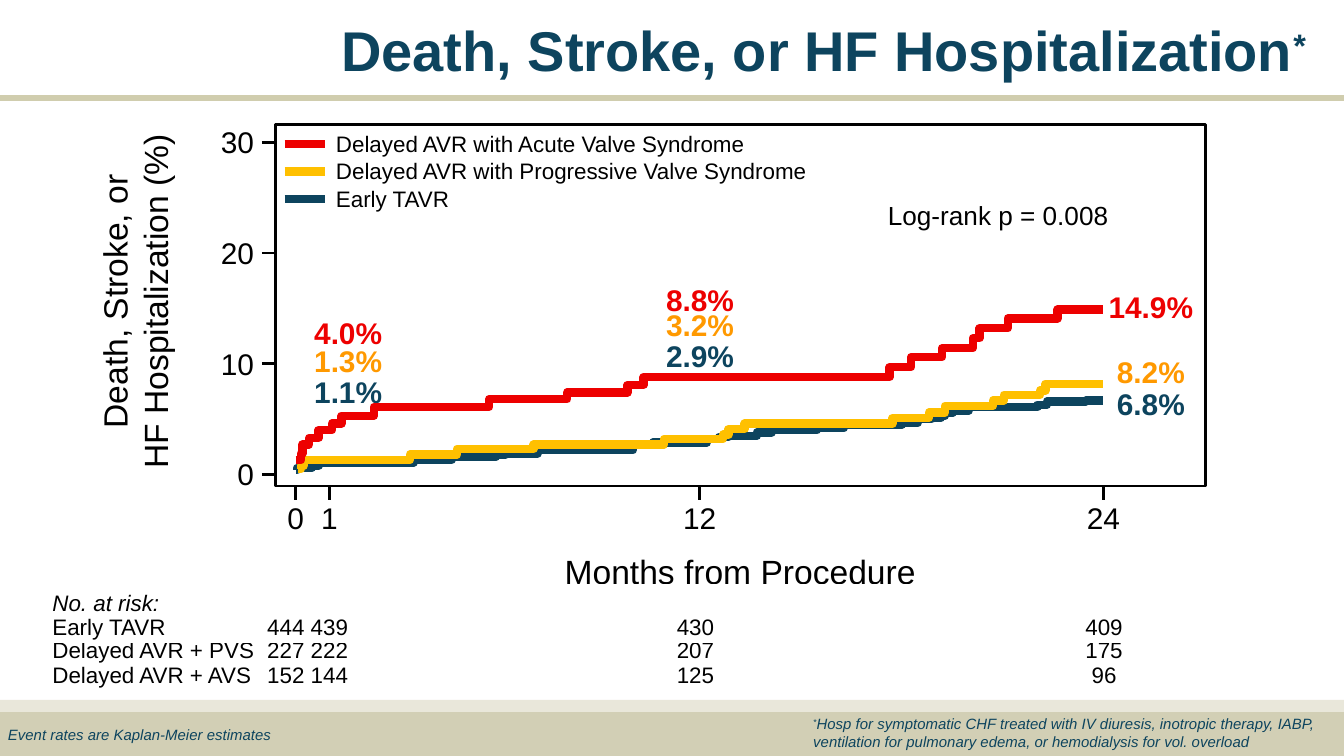
import pptx
import pptx.util
import pptx.dml.color
import pptx.enum.shapes
import pptx.enum.text
import lxml.etree

Cm = pptx.util.Cm
Pt = pptx.util.Pt
RGB = pptx.dml.color.RGBColor.from_string
ALIGN = pptx.enum.text.PP_ALIGN
SHAPE = pptx.enum.shapes.MSO_SHAPE
HUES = {
    "ink": "000000", "navy": "0D445E", "red": "ED0000", "gold": "FFC000",
    "orange": "FF9900", "sand": "D2CFB5", "pale": "E9E7DA", "rule": "D0CDAE",
}
DRAW = "{http://schemas.openxmlformats.org/drawingml/2006/main}"


def write(frame, text, size=16, hue="ink", bold=False, slant=False,
          align=ALIGN.LEFT, space=None):
    frame.word_wrap = True
    for i, line in enumerate(text.split("\n")):
        par = frame.add_paragraph() if i else frame.paragraphs[0]
        par.alignment = align
        par.space_before = Pt(0)
        if space:
            par.line_spacing = Pt(space)
        for part in filter(None, line.partition("*")):
            run = par.add_run()
            run.text = part
            run.font.name = "Arial"
            run.font.size = Pt(size)
            run.font.bold = bold
            run.font.italic = slant
            run.font.color.rgb = RGB(HUES[hue])
            if part == "*":
                run.font._element.set("baseline", "26000")


def place(text, x, y, wide, high, **style):
    frame = slide.shapes.add_textbox(Cm(x), Cm(y), Cm(wide), Cm(high)).text_frame
    frame.margin_left = frame.margin_right = frame.margin_bottom = 0
    frame.margin_top = Cm(0.05)
    write(frame, text, **style)
    return frame


deck = pptx.Presentation()
deck.slide_width = Cm(25.4)
deck.slide_height = Cm(14.29)
slide = deck.slides.add_slide(deck.slide_layouts[5])

for hue, top, high in [("sand", 13.46, 0.83), ("pale", 13.23, 0.23)]:
    band = slide.shapes.add_shape(SHAPE.RECTANGLE, 0, Cm(top), Cm(25.4), Cm(high))
    band.shadow.inherit = False
    band.fill.solid()
    band.fill.fore_color.rgb = RGB(HUES[hue])
    band.line.fill.background()

title = slide.shapes.title
title.left, title.top, title.width, title.height = Cm(6.12), Cm(0.05), Cm(19), Cm(1.78)
frame = title.text_frame
frame.vertical_anchor = pptx.enum.text.MSO_ANCHOR.TOP
frame.margin_left, frame.margin_top = Cm(0.33), Cm(0.25)
frame.margin_right = frame.margin_bottom = 0
write(frame, "Death, Stroke, or HF Hospitalization*", size=30, hue="navy", bold=True)

left, top, wide, high = 5.21, 2.36, 17.57, 6.83
floor = top + high
zero_x, zero_y = 5.59, 8.97
month, point = 0.636, 0.2093

plot = slide.shapes.add_shape(SHAPE.RECTANGLE, Cm(left), Cm(top), Cm(wide), Cm(high))
plot.shadow.inherit = False
plot.fill.background()
plot.line.color.rgb = RGB(HUES["ink"])
plot.line.width = Pt(1.5)

lines = [(0, 1.85, 25.4, 1.85, "rule", 3)]
for rate in (30, 20, 10, 0):
    y = zero_y - rate * point
    lines.append((left - 0.26, y, left, y, "ink", 1.5))
    place(str(rate), 3.8, y - 0.4, 1, 0.74, align=ALIGN.RIGHT)
for time in (0, 1, 12, 24):
    x = zero_x + time * month
    lines.append((x, floor, x, floor + 0.26, "ink", 1.5))
    place(str(time), x - 0.5, 9.4, 1, 0.74, align=ALIGN.CENTER)

legend = [
    ("Delayed AVR with Acute Valve Syndrome", "red"),
    ("Delayed AVR with Progressive Valve Syndrome", "gold"),
    ("Early TAVR", "navy"),
]
for i, (name, hue) in enumerate(legend):
    y = 2.72 + 0.52 * i
    lines.append((5.38, y, 6.15, y, hue, 4.5))
    place(name, 6.35, y - 0.31, 10, 0.58, size=12)

for x1, y1, x2, y2, hue, weight in lines:
    line = slide.shapes.add_connector(
        pptx.enum.shapes.MSO_CONNECTOR.STRAIGHT, Cm(x1), Cm(y1), Cm(x2), Cm(y2))
    line.line.color.rgb = RGB(HUES[hue])
    line.line.width = Pt(weight)
    lxml.etree.SubElement(line._element.spPr, DRAW + "effectLst")

place("Months from Procedure", 10.49, 10.36, 7, 0.8, size=18, align=ALIGN.CENTER)
place("Log-rank p = 0.008", 16.78, 3.71, 5, 0.66, size=14)
label = place("Death, Stroke, or\nHF Hospitalization (%)", 1.78, 2.19, 1.55, 7.02,
              size=18, align=ALIGN.CENTER, space=21.6)
label.margin_top = 0
label._txBody.bodyPr.set("vert", "vert270")

rates = [
    (6.58, [("4.0%", 6.27), ("1.3%", 6.81), ("1.1%", 7.39)]),
    (13.23, [("8.8%", 5.66), ("3.2%", 6.12), ("2.9%", 6.71)]),
    (21.75, [("14.9%", 5.79), ("8.2%", 7.01), ("6.8%", 7.62)]),
]
for x, group in rates:
    for (text, y), hue in zip(group, ("red", "orange", "navy")):
        place(text, x - 1, y - 0.38, 2, 0.74, hue=hue, bold=True, align=ALIGN.CENTER)

risk = [
    ("Early TAVR", "444 439", "430", "409"),
    ("Delayed AVR + PVS", "227 222", "207", "175"),
    ("Delayed AVR + AVS", "152 144", "125", "96"),
]
grid = slide.shapes.add_table(4, 4, Cm(0.91), Cm(11.05), Cm(20.36), Cm(2.02)).table
grid.first_row = grid.horz_banding = False
for col, size in zip(grid.columns, (4.01, 4.8, 7.26, 4.29)):
    col.width = Cm(size)
for row, size in zip(grid.rows, (0.58, 0.48, 0.43, 0.53)):
    row.height = Cm(size)
for row in grid.rows:
    for cell, inset in zip(row.cells, (0.08, 0.13, 3.07, 3.48)):
        cell.fill.background()
        cell.margin_left = Cm(inset)
        cell.margin_right = cell.margin_top = cell.margin_bottom = 0
head = grid.cell(0, 0)
head.merge(grid.cell(0, 3))
head.margin_top = Cm(0.1)
write(head.text_frame, "No. at risk:", size=12, slant=True, space=14.3)
for i, (texts, space) in enumerate(zip(risk, (12.6, 11.3, 12.7)), 1):
    for j, text in enumerate(texts):
        write(grid.cell(i, j).text_frame, text, size=12, space=space,
              align=ALIGN.CENTER if j == 3 else ALIGN.LEFT)

curves = {
    "navy": [
        (0, 0.4), (0.04, 0.6), (0.48, 0.8), (0.68, 1.1), (3.51, 1.3), (4.63, 1.6),
        (5.95, 1.8), (6.23, 1.9), (7.19, 2.2), (10.02, 2.7), (10.62, 2.9),
        (12.22, 3.2), (12.58, 3.4), (12.86, 3.5), (13.7, 3.8), (14.14, 4),
        (15.49, 4.2), (16.29, 4.5), (18.01, 4.7), (18.49, 5), (18.89, 5.1),
        (19.17, 5.3), (19.29, 5.6), (19.53, 5.8), (20, 6.1), (22.04, 6.3),
        (22.32, 6.6), (23.48, 6.7), (24, 6.7)],
    "gold": [
        (0.08, 0.5), (0.16, 0.8), (0.24, 1.3), (3.39, 1.8), (4.79, 2.3),
        (7.07, 2.7), (10.94, 3.2), (12.7, 3.6), (12.86, 4.1), (13.34, 4.6),
        (17.73, 5.1), (18.81, 5.6), (19.29, 6.2), (20.72, 6.7), (21.04, 7.2),
        (22.12, 7.6), (22.28, 8.2), (24, 8.2)],
    "red": [
        (0, 1.3), (0.16, 1.9), (0.2, 2.7), (0.4, 3.3), (0.68, 4), (1.08, 4.6),
        (1.36, 5.3), (2.32, 6.1), (5.75, 6.8), (8.07, 7.4), (9.86, 8.1),
        (10.34, 8.8), (17.65, 9.7), (18.29, 10.6), (19.21, 11.4), (20.12, 12.3),
        (20.32, 13.2), (21.16, 14.1), (22.64, 14.9), (24, 14.9)],
}
for hue, steps in curves.items():
    spots = [steps[0]]
    for time, rate in steps[1:]:
        spots += [(time, spots[-1][1]), (time, rate)]
    spots = [(Cm(zero_x + time * month), Cm(zero_y - rate * point)) for time, rate in spots]
    pen = slide.shapes.build_freeform(*spots[0])
    pen.add_line_segments(spots[1:], close=False)
    curve = pen.convert_to_shape()
    curve.shadow.inherit = False
    curve.fill.background()
    curve.line.color.rgb = RGB(HUES[hue])
    curve.line.width = Pt(4.5)

note = {"size": 8, "hue": "navy", "slant": True}
place("Event rates are Kaplan-Meier estimates", 0.15, 13.67, 6, 0.41, **note)
place("*Hosp for symptomatic CHF treated with IV diuresis, inotropic therapy, IABP, "
      "ventilation for pulmonary edema, or hemodialysis for vol. overload",
      15.37, 13.46, 9.7, 0.76, **note)

deck.save("out.pptx")
